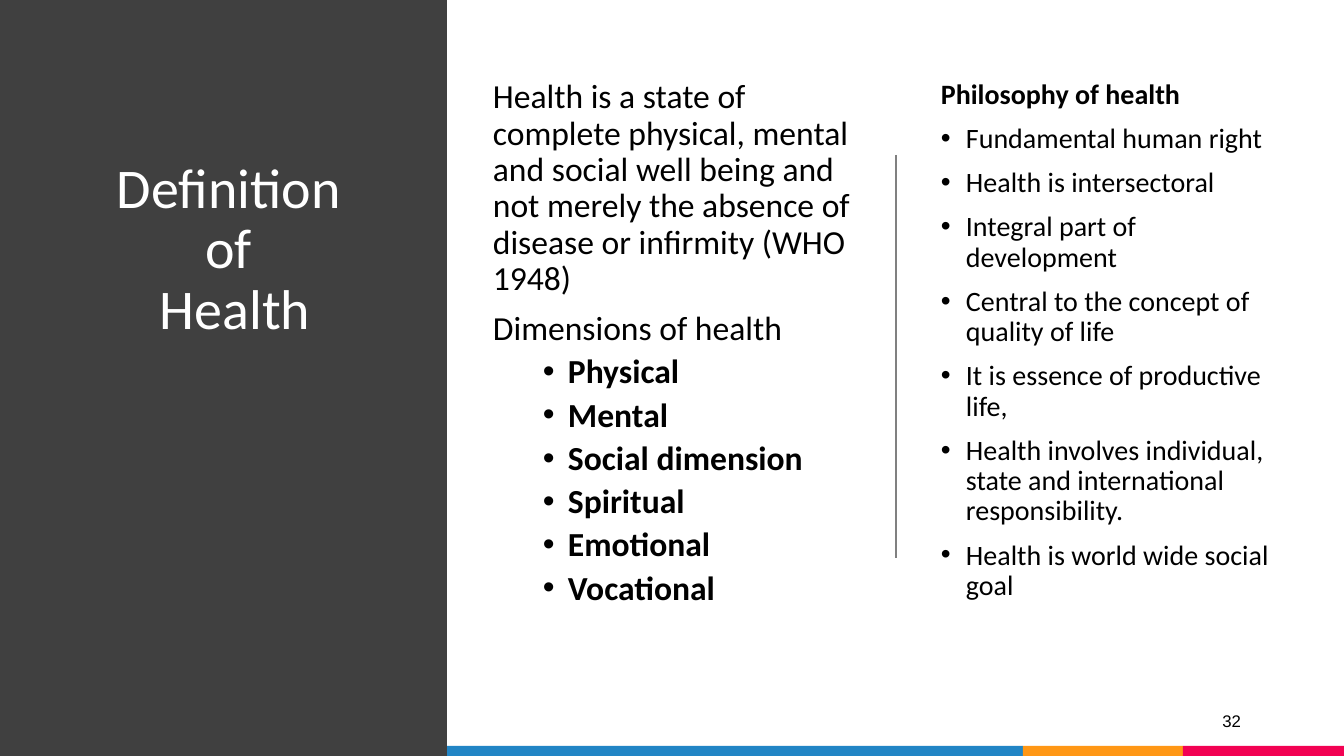
import pptx
import pptx.dml.color
import pptx.enum.shapes
import pptx.enum.text
import pptx.oxml.ns
import pptx.util
from lxml import etree

PX = 12192000 / 1344
INDENT = 25
ALIGN = pptx.enum.text.PP_ALIGN
ANCHOR = pptx.enum.text.MSO_ANCHOR


def color(value):
    return pptx.dml.color.RGBColor.from_string(value)


def emu(*lengths):
    return [round(length * PX) for length in lengths]


deck = pptx.Presentation()
deck.slide_width, deck.slide_height = emu(1344, 756)
page = deck.slides.add_slide(deck.slide_layouts[6])

# Dark title panel and the coloured strip along the bottom edge
for left, top, width, height, fill in [
    (447, 746, 576, 10, "2185C5"),
    (1023, 746, 160, 10, "FF9715"),
    (1183, 746, 161, 10, "F20253"),
    (0, 0, 447, 756, "404040"),
]:
    bar = page.shapes.add_shape(
        pptx.enum.shapes.MSO_SHAPE.RECTANGLE, *emu(left, top, width, height))
    bar.shadow.inherit = False
    bar.fill.solid()
    bar.fill.fore_color.rgb = color(fill)
    bar.line.fill.background()

# Divider between the two columns
divider = page.shapes.add_connector(
    pptx.enum.shapes.MSO_CONNECTOR.STRAIGHT, *emu(896, 155, 896, 558))
divider.line.color.rgb = color("808080")
divider.line.width = pptx.util.Pt(1)
etree.SubElement(divider._element.spPr, pptx.oxml.ns.qn("a:effectLst"))

# Paragraph styles: bullet indent in px (None for no bullet), spacing in points
PLAIN = {"bullet": None, "bold": False, "line_spacing": 0.9, "before": 10, "after": 0}
HEADING = PLAIN | {"bold": True}
POINT = PLAIN | {"bullet": 0}
DIMENSION = HEADING | {"bullet": 50, "before": 5}
TITLE = PLAIN | {"before": 0}
NUMBER = TITLE | {"line_spacing": 1.0, "after": 6}

dimensions = ["Physical", "Mental", "Social dimension", "Spiritual", "Emotional", "Vocational"]
philosophy = [
    "Fundamental human right",
    "Health is intersectoral",
    "Integral part of development",
    "Central to the concept of quality of life",
    "It is essence of productive life,",
    "Health involves individual, state and international responsibility.",
    "Health is world wide social goal",
]
definition = ("Health is a state of complete physical, mental and social well being and "
              "not merely the absence of disease or infirmity (WHO 1948)")

text_boxes = [
    {"place": (59, 155, 352, 481), "size": 40, "font": "Calibri", "color": "FFFFFF",
     "align": ALIGN.CENTER, "anchor": ANCHOR.TOP,
     "lines": [("Definition \vof \vHealth", TITLE)]},
    {"place": (483, 75, 378, 626), "size": 24, "font": "Calibri", "color": "000000",
     "align": ALIGN.LEFT, "anchor": ANCHOR.TOP,
     "lines": [(definition, PLAIN), ("Dimensions of health", PLAIN)]
     + [(name, DIMENSION) for name in dimensions]},
    {"place": (931, 75, 353, 562), "size": 20, "font": "Calibri", "color": "000000",
     "align": ALIGN.LEFT, "anchor": ANCHOR.TOP,
     "lines": [("Philosophy of health", HEADING)]
     + [(idea, POINT) for idea in philosophy]},
    {"place": (1014, 701, 237, 40), "size": 12, "font": "Arial", "color": "000000",
     "align": ALIGN.RIGHT, "anchor": ANCHOR.MIDDLE,
     "lines": [("32", NUMBER)]},
]

for item in text_boxes:
    box = page.shapes.add_textbox(*emu(*item["place"]))
    frame = box.text_frame
    frame.word_wrap = True
    frame.vertical_anchor = item["anchor"]
    for index, (text, style) in enumerate(item["lines"]):
        para = frame.add_paragraph() if index else frame.paragraphs[0]
        para.text = text
        for name, value in {
            "alignment": item["align"],
            "line_spacing": style["line_spacing"],
            "space_before": pptx.util.Pt(style["before"]),
            "space_after": pptx.util.Pt(style["after"]),
        }.items():
            setattr(para, name, value)
        for span in para.runs:
            for name, value in {
                "name": item["font"],
                "size": pptx.util.Pt(item["size"]),
                "bold": style["bold"],
            }.items():
                setattr(span.font, name, value)
            span.font.color.rgb = color(item["color"])
        if style["bullet"] is not None:
            margin, hanging = emu(style["bullet"] + INDENT, -INDENT)
            properties = para._p.get_or_add_pPr()
            properties.set("marL", str(margin))
            properties.set("indent", str(hanging))
            etree.SubElement(properties, pptx.oxml.ns.qn("a:buFont"), typeface="Arial")
            etree.SubElement(properties, pptx.oxml.ns.qn("a:buChar"), char="•")

deck.save("out.pptx")
